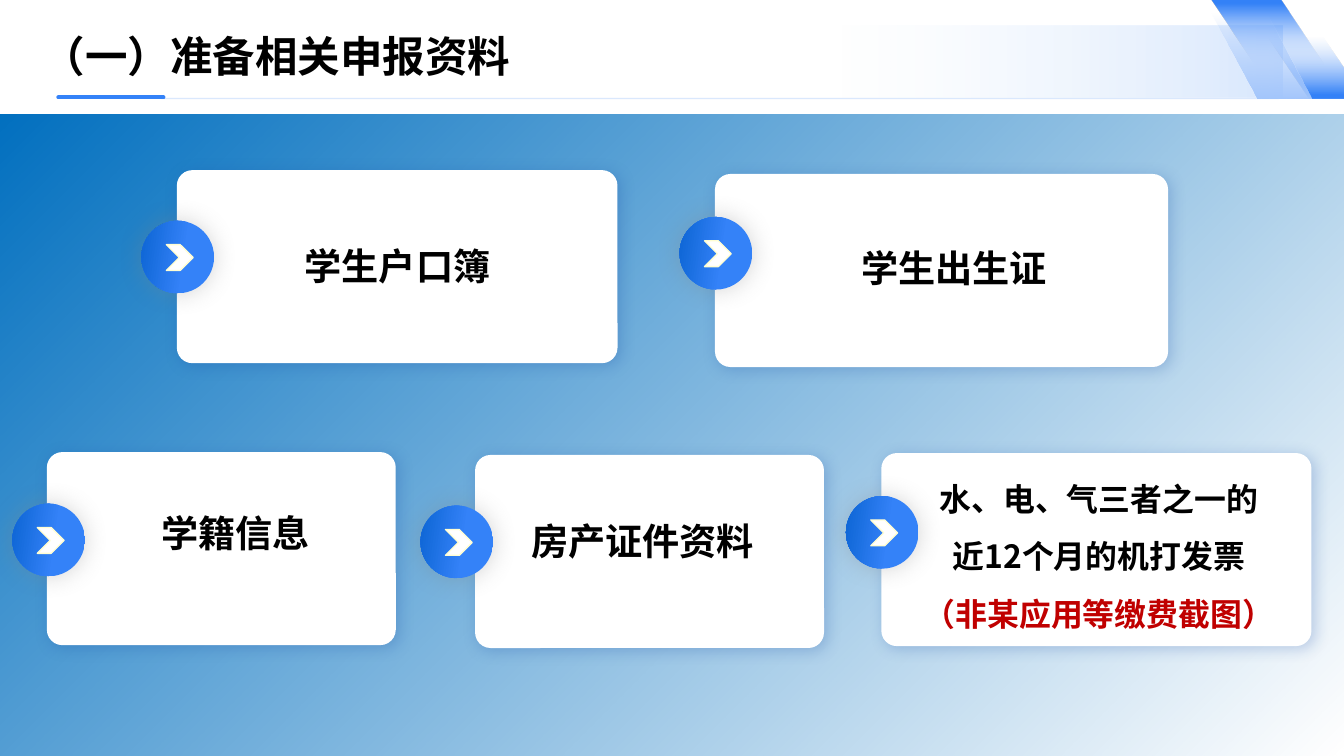
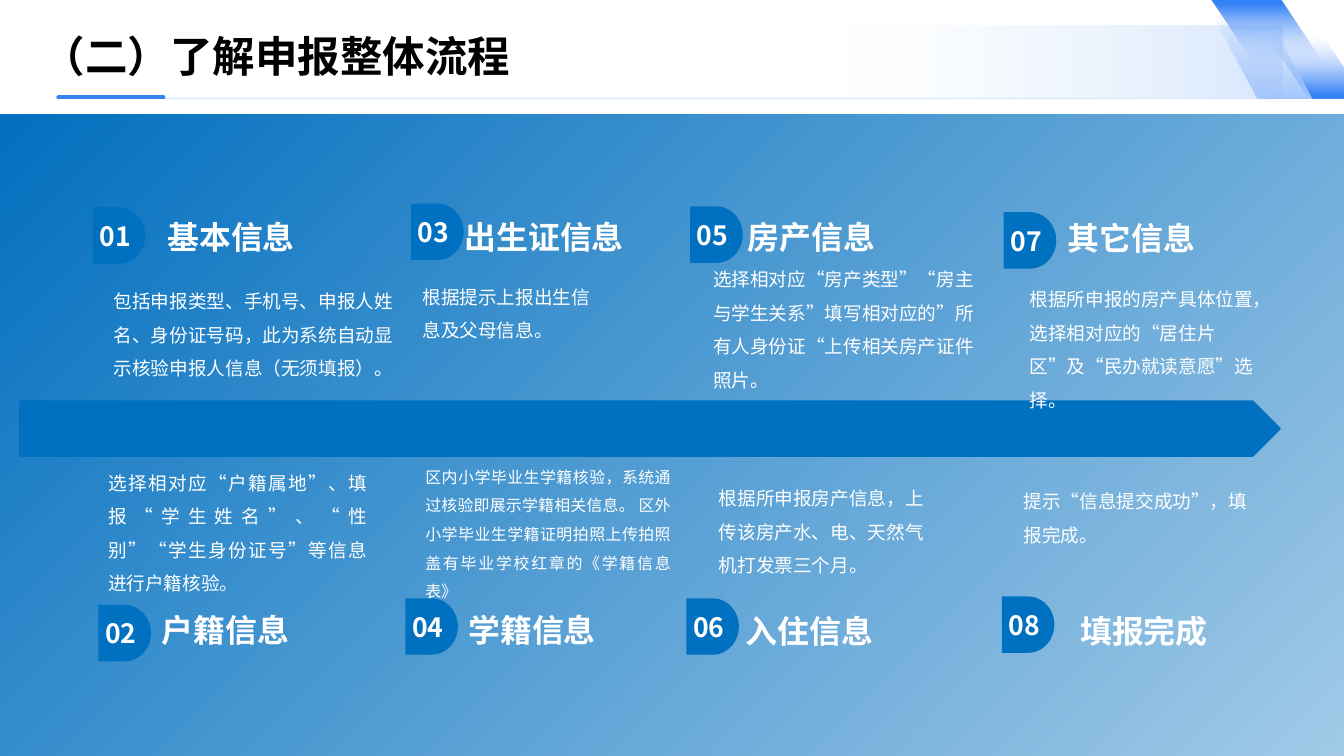
from dataclasses import dataclass

from lxml.etree import SubElement
from pptx import Presentation
from pptx.dml.color import RGBColor
from pptx.enum.shapes import MSO_CONNECTOR, MSO_SHAPE
from pptx.enum.text import MSO_ANCHOR, MSO_AUTO_SIZE, PP_ALIGN
from pptx.oxml.ns import qn
from pptx.util import Inches, Pt

# Shared look
BLACK = RGBColor(0x00, 0x00, 0x00)
WHITE = RGBColor(0xFF, 0xFF, 0xFF)
RED = RGBColor(0xC0, 0x00, 0x00)
BLUE = RGBColor(0x00, 0x70, 0xC0)
BRIGHT_BLUE = RGBColor(0x34, 0x82, 0xF8)
PALE_BLUE = RGBColor(0xA3, 0xC6, 0xFC)
DEEP_BLUE = RGBColor(0x0D, 0x65, 0xD4)
SHADOW_BLUE = RGBColor(0x11, 0x46, 0xA2)
GREY = RGBColor(0x80, 0x80, 0x80)
CREAM = RGBColor(0xFF, 0xFE, 0xD2)
CJK_FONT = "Noto Sans CJK SC"
TITLE_FONT = "Arial"
SLIDE_WIDTH, SLIDE_HEIGHT, HEADER_HEIGHT = 14.06, 7.91, 1.2
INSET_X, INSET_Y = 0.1, 0.05

Area = tuple[float, float, float, float]
Point = tuple[float, float]


@dataclass(frozen=True)
class Stop:
    position: float
    color: RGBColor
    opacity: int = 100


@dataclass(frozen=True)
class Shadow:
    color: RGBColor
    opacity: int
    blur: int
    distance: int
    angle: int


@dataclass(frozen=True)
class Line:
    text: str
    color: RGBColor = BLACK


@dataclass(frozen=True)
class Card:
    area: Area
    badge: Point
    label: Area
    lines: tuple[Line, ...]
    size: int = 28
    align: PP_ALIGN = PP_ALIGN.LEFT
    spacing: float = 1.0


@dataclass(frozen=True)
class Step:
    number: str
    badge: Point
    name: str
    name_at: Point
    body: str
    body_area: Area
    size: int = 14
    anchor: MSO_ANCHOR = MSO_ANCHOR.TOP
    align: PP_ALIGN = PP_ALIGN.LEFT


@dataclass(frozen=True)
class Ribbon:
    points: tuple[Point, ...]
    stops: tuple[Stop, Stop]
    angle: int


CARD_SHADOW = Shadow(SHADOW_BLUE, 24, 12, 3, 45)
BADGE_SHADOW = Shadow(GREY, 32, 18, 0, 358)
RIBBON_STOPS = (Stop(0.35, PALE_BLUE, 0), Stop(0.96, BRIGHT_BLUE))
RIBBONS = (
    Ribbon(((13.69, 1.03), (13.03, 0.04), (13.6, 0.04), (14.06, 0.72), (14.06, 1.03)),
           RIBBON_STOPS, 90),
    Ribbon(((13.37, 1.04), (12.67, 0), (13.4, 0), (14.1, 1.04)), RIBBON_STOPS, 270),
    Ribbon(((13.25, 0.14), (13.72, 1.03), (13.15, 1.03), (12.67, 0.14)),
           (Stop(0, PALE_BLUE, 0), Stop(1, PALE_BLUE)), 90),
)

CARDS = (
    Card((1.85, 1.78, 4.61, 2.02), (1.48, 2.31), (3.09, 2.5, 2.33, 0.57),
         (Line("学生户口簿"),)),
    Card((7.48, 1.82, 4.74, 2.02), (7.11, 2.27), (8.91, 2.52, 2.39, 0.57),
         (Line("学生出生证"),)),
    Card((0.49, 4.73, 3.65, 2.02), (0.13, 5.27), (0.97, 5.29, 2.99, 0.57),
         (Line("学籍信息"),), align=PP_ALIGN.CENTER),
    Card((4.97, 4.76, 3.65, 2.02), (4.4, 5.29), (5.46, 5.37, 2.99, 0.57),
         (Line("房产证件资料"),)),
    Card((9.22, 4.74, 4.5, 2.02), (8.85, 5.19), (9.37, 4.77, 4.25, 1.92),
         (Line("水、电、气三者之一的"), Line("近12个月的机打发票"),
          Line("（非某应用等缴费截图）", RED)),
         24, PP_ALIGN.CENTER, 1.5),
)

STEPS = (
    Step("01", (0.97, 2.17), "基本信息", (1.75, 2.25),
         "包括申报类型、手机号、申报人姓名、身份证号码，此为系统自动显示核验申报人信息（无须填报）。",
         (1.19, 2.92, 2.96, 1.21)),
    Step("02", (1.03, 6.33), "户籍信息", (1.69, 6.36),
         "选择相对应“户籍属地”、填报“学生姓名”、“性别”“学生身份证号”等信息进行户籍核验。",
         (1.13, 5.14, 2.71, 1.08), anchor=MSO_ANCHOR.BOTTOM, align=PP_ALIGN.JUSTIFY),
    Step("03", (4.3, 2.13), "出生证信息", (4.86, 2.25),
         "根据提示上报出生信息及父母信息。", (4.42, 2.87, 1.86, 0.93)),
    Step("04", (4.24, 6.26), "学籍信息", (4.9, 6.36),
         "区内小学毕业生学籍核验，系统通过核验即展示学籍相关信息。 区外小学毕业生学籍证明拍照上传拍照盖有毕业学校红章的《学籍信息表》",
         (4.45, 4.79, 2.57, 1.5), size=12, align=PP_ALIGN.JUSTIFY),
    Step("05", (7.22, 2.16), "房产信息", (7.82, 2.25),
         "选择相对应“房产类型”“房主与学生关系”填写相对应的”所有人身份证“上传相关房产证件照片。",
         (7.46, 3.01, 2.79, 1.08), anchor=MSO_ANCHOR.BOTTOM),
    Step("06", (7.18, 6.26), "入住信息", (7.8, 6.37),
         "根据所申报房产信息，上传该房产水、电、天然气机打发票三个月。",
         (7.52, 4.98, 2.31, 1.09)),
    Step("07", (10.5, 2.22), "其它信息", (11.17, 2.26),
         "根据所申报的房产具体位置，选择相对应的“居住片区”及“民办就读意愿”选择。",
         (10.77, 2.9, 2.39, 1.21)),
    Step("08", (10.48, 6.24), "填报完成", (11.3, 6.37),
         "提示“信息提交成功”，填报完成。", (10.71, 4.94, 2.45, 0.77),
         anchor=MSO_ANCHOR.BOTTOM),
)


# Drawing helpers
def set_opacity(color_element, percent: int) -> None:
    if percent < 100:
        SubElement(color_element, qn("a:alpha"), val=str(percent * 1000))


def fill_gradient(shape, stops: tuple[Stop, Stop], angle: int) -> None:
    """Fill with two stops; the angle runs clockwise."""
    shape.fill.gradient()
    shape.fill.gradient_angle = (360 - angle) % 360
    for target, stop in zip(shape.fill.gradient_stops, stops):
        target.position = stop.position
        target.color.rgb = stop.color
    colors = shape.element.spPr.findall(".//" + qn("a:gs") + "/" + qn("a:srgbClr"))
    for color_element, stop in zip(colors, stops):
        set_opacity(color_element, stop.opacity)


def add_block(page, kind: MSO_SHAPE, area: Area, color: RGBColor | None = None):
    block = page.shapes.add_shape(kind, *map(Inches, area))
    block.shadow.inherit = False
    block.line.fill.background()
    if color is not None:
        block.fill.solid()
        block.fill.fore_color.rgb = color
    return block


def cast_shadow(shape, shadow: Shadow) -> None:
    effects = shape.element.spPr.find(qn("a:effectLst"))
    outer = SubElement(effects, qn("a:outerShdw"), blurRad=str(Pt(shadow.blur)),
                       dist=str(Pt(shadow.distance)), dir=str(shadow.angle * 60000),
                       algn="ctr", rotWithShape="0")
    color_element = SubElement(outer, qn("a:srgbClr"), val=str(shadow.color))
    set_opacity(color_element, shadow.opacity)


def add_rule(page, start: Point, end: Point, color: RGBColor, width: float,
             opacity: int = 100) -> None:
    rule = page.shapes.add_connector(MSO_CONNECTOR.STRAIGHT, *map(Inches, start + end))
    rule.line.color.rgb = color
    rule.line.width = Pt(width)
    properties = rule.element.spPr
    properties.find(qn("a:ln")).set("cap", "rnd")
    set_opacity(properties.find(".//" + qn("a:srgbClr")), opacity)
    SubElement(properties, qn("a:effectLst"))


def write(box, lines: tuple[Line, ...], size: int, bold: bool = True,
          font: str = CJK_FONT, align: PP_ALIGN = PP_ALIGN.LEFT,
          anchor: MSO_ANCHOR = MSO_ANCHOR.TOP, spacing: float = 1.0,
          inset: bool = False, wrap: bool = True) -> None:
    frame = box.text_frame
    frame.word_wrap = wrap
    frame.auto_size = MSO_AUTO_SIZE.NONE
    frame.vertical_anchor = anchor
    frame.margin_left = frame.margin_right = Inches(INSET_X if inset else 0)
    frame.margin_top = frame.margin_bottom = Inches(INSET_Y if inset else 0)
    for index, line in enumerate(lines):
        para = frame.add_paragraph() if index else frame.paragraphs[0]
        para.alignment = align
        para.line_spacing = spacing
        span = para.add_run()
        span.text = line.text
        span.font.name = font
        span.font.size = Pt(size)
        span.font.bold = bold
        span.font.color.rgb = line.color
        properties = span.font._element
        properties.set("lang", "zh-CN")
        SubElement(properties, qn("a:ea"), typeface=CJK_FONT)


def add_text(page, area: Area, lines: tuple[Line, ...], size: int, **style) -> None:
    write(page.shapes.add_textbox(*map(Inches, area)), lines, size, **style)


def add_ribbon(page, ribbon: Ribbon) -> None:
    corners = [(Inches(x), Inches(y)) for x, y in ribbon.points]
    builder = page.shapes.build_freeform(*corners[0], scale=1.0)
    builder.add_line_segments(corners[1:], close=True)
    shape = builder.convert_to_shape()
    shape.shadow.inherit = False
    shape.line.fill.background()
    fill_gradient(shape, ribbon.stops, ribbon.angle)


def add_page(deck, title: str, corner_opacity: int):
    page = deck.slides.add_slide(deck.slide_layouts[6])
    # Body backdrop
    backdrop = add_block(page, MSO_SHAPE.RECTANGLE,
                         (0, HEADER_HEIGHT, SLIDE_WIDTH, SLIDE_HEIGHT - HEADER_HEIGHT))
    fill_gradient(backdrop, (Stop(0, BLUE, corner_opacity), Stop(1, BLUE)), 225)
    # Header band, rules and title
    band = add_block(page, MSO_SHAPE.RECTANGLE, (4.79, 0.27, 8.63, 0.75))
    fill_gradient(band, (Stop(0.46, PALE_BLUE, 0), Stop(1, BRIGHT_BLUE, 19)), 0)
    add_rule(page, (1.69, 1.03), (13.38, 1.03), PALE_BLUE, 1, 40)
    add_rule(page, (0.61, 1.02), (1.71, 1.02), BRIGHT_BLUE, 3)
    add_text(page, (0.35, 0.27, 13.04, 0.64), (Line(title),), 32, font=TITLE_FONT,
             inset=True)
    for ribbon in RIBBONS:
        add_ribbon(page, ribbon)
    return page


def add_card(page, card: Card) -> None:
    panel = add_block(page, MSO_SHAPE.ROUNDED_RECTANGLE, card.area, WHITE)
    panel.adjustments[0] = 0.08
    cast_shadow(panel, CARD_SHADOW)
    left, top = card.badge
    badge = add_block(page, MSO_SHAPE.OVAL, (left, top, 0.76, 0.76))
    fill_gradient(badge, (Stop(0.41, BRIGHT_BLUE), Stop(1, DEEP_BLUE)), 188)
    cast_shadow(badge, BADGE_SHADOW)
    chevron = add_block(page, MSO_SHAPE.CHEVRON, (left + 0.26, top + 0.25, 0.28, 0.27), WHITE)
    chevron.line.color.rgb = CREAM
    chevron.line.width = Pt(1)
    add_text(page, card.label, card.lines, card.size, align=card.align,
             spacing=card.spacing, inset=True)


def add_step(page, step: Step) -> None:
    badge = add_block(page, MSO_SHAPE.FLOWCHART_DELAY, (*step.badge, 0.55, 0.59), BLUE)
    write(badge, (Line(step.number, WHITE),), 20, align=PP_ALIGN.CENTER,
          anchor=MSO_ANCHOR.MIDDLE, wrap=False)
    add_text(page, (*step.name_at, 2.02, 0.45), (Line(step.name, WHITE),), 24,
             anchor=MSO_ANCHOR.MIDDLE)
    add_text(page, step.body_area, (Line(step.body, WHITE),), step.size, bold=False,
             align=step.align, anchor=step.anchor, spacing=1.5)


def main() -> None:
    deck = Presentation()
    deck.slide_width, deck.slide_height = Inches(SLIDE_WIDTH), Inches(SLIDE_HEIGHT)

    # Documents to prepare
    documents = add_page(deck, "（一）准备相关申报资料", 0)
    for card in CARDS:
        add_card(documents, card)

    # Steps above and below the arrow
    process = add_page(deck, "（二）了解申报整体流程", 37)
    arrow = add_block(process, MSO_SHAPE.PENTAGON, (0.21, 4.2, 13.18, 0.57), BLUE)
    arrow.line.color.rgb = BLUE
    arrow.line.width = Pt(1.5)
    for step in STEPS:
        add_step(process, step)

    deck.save("out.pptx")


if __name__ == "__main__":
    main()
